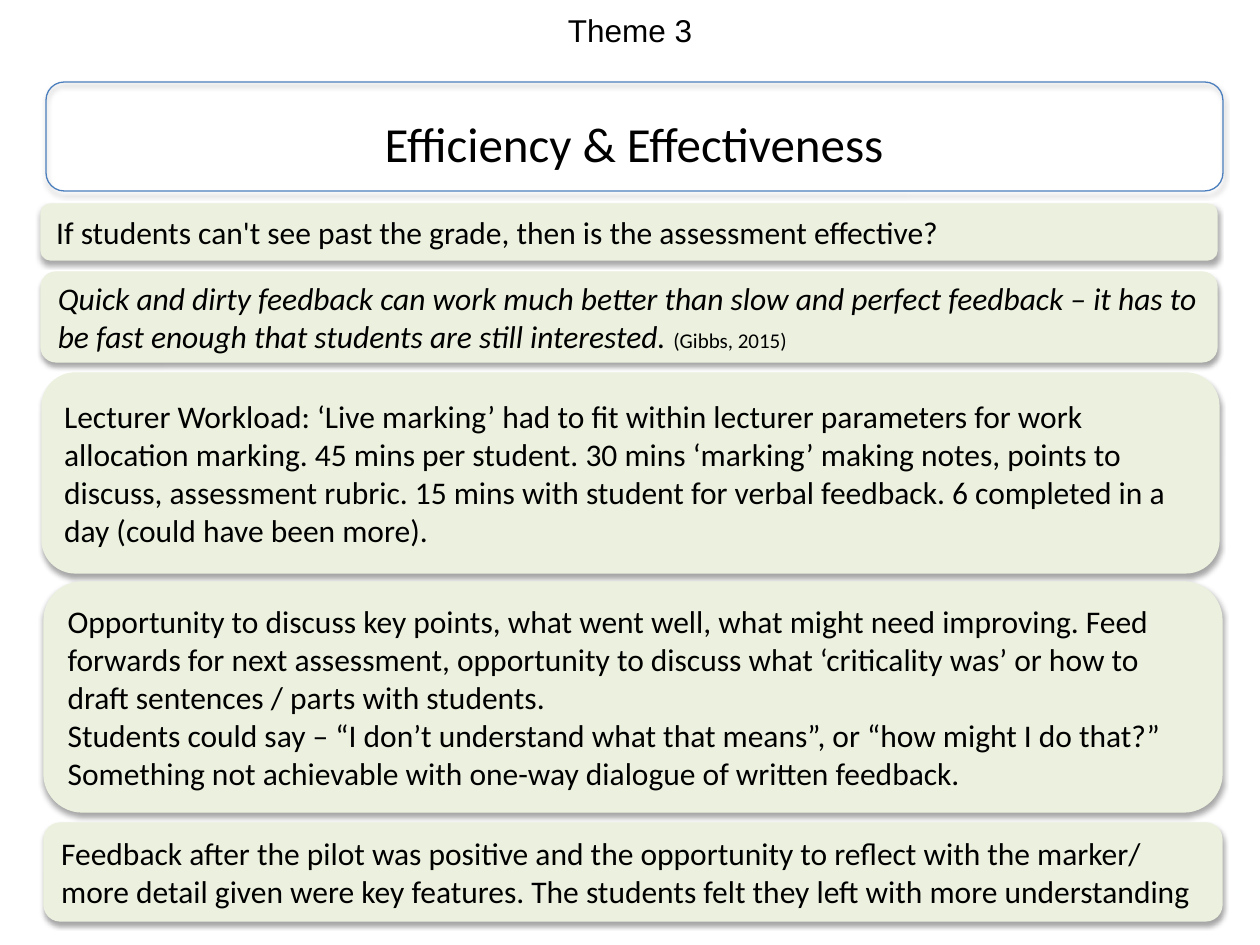
import pptx
import pptx.util
import pptx.dml.color
import pptx.enum.shapes
import pptx.enum.text
import pptx.oxml.ns
import lxml.etree

PX = 914400 / 126
COLORS = {"text": "000000", "panel": "EBF1DE", "frame": "4B7EBC", "shadow": "000000"}
BODY = {"name": "Calibri", "size": pptx.util.Pt(18)}
QUOTE = {**BODY, "italic": True}
CITATION = {**BODY, "size": pptx.util.Pt(12), "italic": False}
HEADING = {**BODY, "size": pptx.util.Pt(28)}
THEME = {**BODY, "name": "Arial"}

theme = ((552, 11, 156, 49), [[("Theme 3", THEME)]])
heading = ((82, 107, 1104, 72), [[("Efficiency & Effectiveness", HEADING)]])
heading_frame = (46, 82, 1177, 109)
panels = [
    ((41, 204, 1176, 56), [
        [("If students can't see past the grade, then is the assessment effective?", BODY)],
    ]),
    ((41, 272, 1176, 90), [
        [("Quick and dirty feedback can work much better than slow and perfect feedback – it has to "
          "be fast enough that students are still interested. ", QUOTE),
         ("(Gibbs, 2015)", CITATION)],
    ]),
    ((42, 373, 1177, 200), [
        [("Lecturer Workload: ‘Live marking’ had to fit within lecturer parameters for work "
          "allocation marking. 45 mins per student. 30 mins ‘marking’ making notes, points to "
          "discuss, assessment rubric. 15 mins with student for verbal feedback. 6 completed in a "
          "day (could have been more).", BODY)],
    ]),
    ((44, 582, 1178, 230), [
        [("Opportunity to discuss key points, what went well, what might need improving. Feed "
          "forwards for next assessment, opportunity to discuss what ‘criticality was’ or how to "
          "draft sentences / parts with students.", BODY)],
        [("Students could say – “I don’t understand what that means”, or “how might I do that?” "
          "Something not achievable with one-way dialogue of written feedback.", BODY)],
    ]),
    ((44, 823, 1178, 98), [
        [("Feedback after the pilot was positive and the opportunity to reflect with the marker/ "
          "more detail given were key features. The students felt they left with more understanding", BODY)],
    ]),
]


def emu(px):
    return pptx.util.Emu(round(px * PX))


def rgb(name):
    return pptx.dml.color.RGBColor.from_string(COLORS[name])


def add_shadow(sp):
    sp.shadow.inherit = False
    effects = sp._element.spPr.find(pptx.oxml.ns.qn("a:effectLst"))
    values = {"blurRad": pptx.util.Pt(3.1), "dist": pptx.util.Pt(1.8),
              "dir": 90 * 60000, "rotWithShape": 0}
    outer = lxml.etree.SubElement(effects, pptx.oxml.ns.qn("a:outerShdw"),
                                  {key: str(int(value)) for key, value in values.items()})
    color = lxml.etree.SubElement(outer, pptx.oxml.ns.qn("a:srgbClr"), val=COLORS["shadow"])
    lxml.etree.SubElement(color, pptx.oxml.ns.qn("a:alpha"), val="35000")


def add_rounded(s, box, line, fill=None):
    sp = s.shapes.add_shape(pptx.enum.shapes.MSO_SHAPE.ROUNDED_RECTANGLE, *map(emu, box))
    if fill:
        sp.fill.solid()
        sp.fill.fore_color.rgb = rgb(fill)
    else:
        sp.fill.background()
    sp.line.color.rgb = rgb(line)
    sp.line.width = pptx.util.Pt(0.75)
    add_shadow(sp)
    return sp


def write(tf, paragraphs, align):
    tf.word_wrap = True
    for i, runs in enumerate(paragraphs):
        p = tf.add_paragraph() if i else tf.paragraphs[0]
        p.alignment = align
        for text, fmt in runs:
            r = p.add_run()
            r.text = text
            r.font.color.rgb = rgb("text")
            for key, value in fmt.items():
                setattr(r.font, key, value)


def add_label(s, box, paragraphs):
    tf = s.shapes.add_textbox(*map(emu, box)).text_frame
    write(tf, paragraphs, pptx.enum.text.PP_ALIGN.CENTER)
    return tf


def main():
    prs = pptx.Presentation()
    prs.slide_width, prs.slide_height = emu(1260), emu(945)
    s = prs.slides.add_slide(prs.slide_layouts[6])

    tf = add_label(s, *theme)
    for side in ("left", "top", "right", "bottom"):
        setattr(tf, f"margin_{side}", 0)

    for box, paragraphs in panels:
        tf = add_rounded(s, box, "panel", "panel").text_frame
        tf.vertical_anchor = pptx.enum.text.MSO_ANCHOR.MIDDLE
        write(tf, paragraphs, pptx.enum.text.PP_ALIGN.LEFT)

    tf = add_label(s, *heading)
    tf.auto_size = pptx.enum.text.MSO_AUTO_SIZE.SHAPE_TO_FIT_TEXT
    add_rounded(s, heading_frame, "frame")
    prs.save("out.pptx")


if __name__ == "__main__":
    main()
